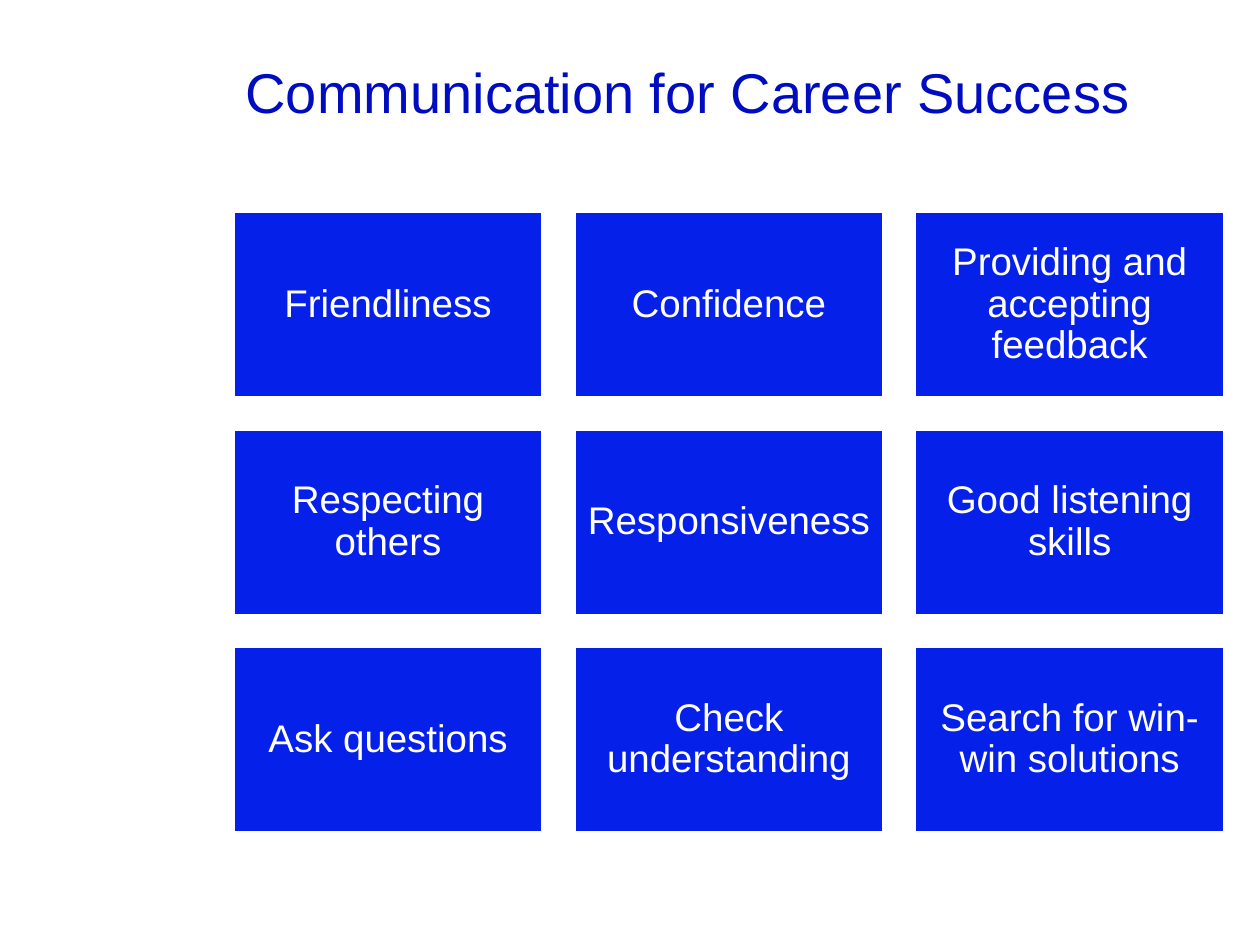
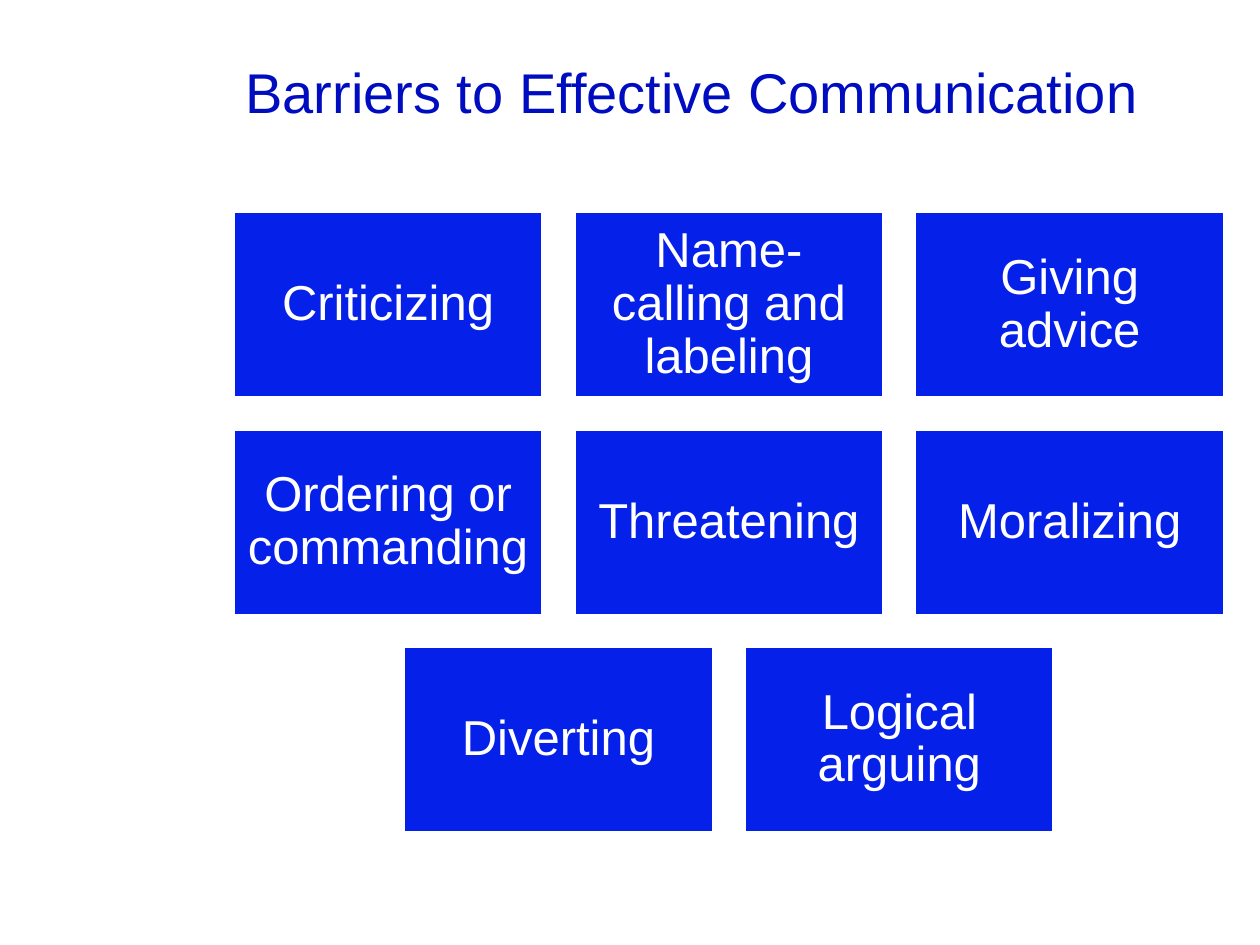
from pptx import Presentation
from pptx.dml.color import RGBColor
from pptx.enum.shapes import MSO_SHAPE as Shape
from pptx.enum.text import MSO_ANCHOR as Anchor, PP_ALIGN as Align
from pptx.util import Inches, Pt

TITLE_BLUE = RGBColor(0x00, 0x0C, 0xC0)
TILE_BLUE = RGBColor(0x05, 0x20, 0xE9)
WHITE = RGBColor(0xFF, 0xFF, 0xFF)
FONT = "Arial"

GRID_LEFT, GRID_TOP, GRID_WIDTH = 1.85, 1.68, 7.87
TILE_WIDTH, TILE_HEIGHT = 2.46, 1.48
COLUMNS = 3
GAP = (GRID_WIDTH - COLUMNS * TILE_WIDTH) / (COLUMNS - 1)

SLIDES = [
    ("Communication for Career Success", 22, 0.09, [
        ["Friendliness", "Confidence", "Providing and accepting feedback"],
        ["Respecting others", "Responsiveness", "Good listening skills"],
        ["Ask questions", "Check understanding", "Search for win-win solutions"],
    ]),
    ("Barriers to Effective Communication", 28, 0.11, [
        ["Criticizing", "Name-calling and labeling", "Giving advice"],
        ["Ordering or commanding", "Threatening", "Moralizing"],
        ["Diverting", "Logical arguing"],
    ]),
]


def write_text(box, text, size, color, align=Align.LEFT, spacing=1.0, inset=0.1):
    frame = box.text_frame
    frame.word_wrap = True
    frame.vertical_anchor = Anchor.MIDDLE
    frame.margin_left = frame.margin_right = Inches(inset)
    frame.margin_top = frame.margin_bottom = Inches(min(inset, 0.09))
    para = frame.paragraphs[0]
    para.alignment = align
    para.line_spacing = spacing
    span = para.add_run()
    span.text = text
    span.font.name = FONT
    span.font.size = Pt(size)
    span.font.color.rgb = color


deck = Presentation()
deck.slide_width = Inches(10)
deck.slide_height = Inches(7.5)

for title, size, inset, rows in SLIDES:
    page = deck.slides.add_slide(deck.slide_layouts[6])
    heading = page.shapes.add_textbox(
        Inches(GRID_LEFT), Inches(0.44), Inches(GRID_WIDTH), Inches(0.56))
    write_text(heading, title, 32, TITLE_BLUE)

    for row, labels in enumerate(rows):
        row_width = len(labels) * (TILE_WIDTH + GAP) - GAP
        row_left = GRID_LEFT + (GRID_WIDTH - row_width) / 2
        top = GRID_TOP + row * (TILE_HEIGHT + GAP)
        for column, label in enumerate(labels):
            left = row_left + column * (TILE_WIDTH + GAP)
            tile = page.shapes.add_shape(
                Shape.RECTANGLE, Inches(left), Inches(top),
                Inches(TILE_WIDTH), Inches(TILE_HEIGHT))
            tile.shadow.inherit = False
            tile.fill.solid()
            tile.fill.fore_color.rgb = TILE_BLUE
            tile.line.color.rgb = WHITE
            tile.line.width = Pt(2)
            write_text(tile, label, size, WHITE,
                       align=Align.CENTER, spacing=0.9, inset=inset)

deck.save("out.pptx")
